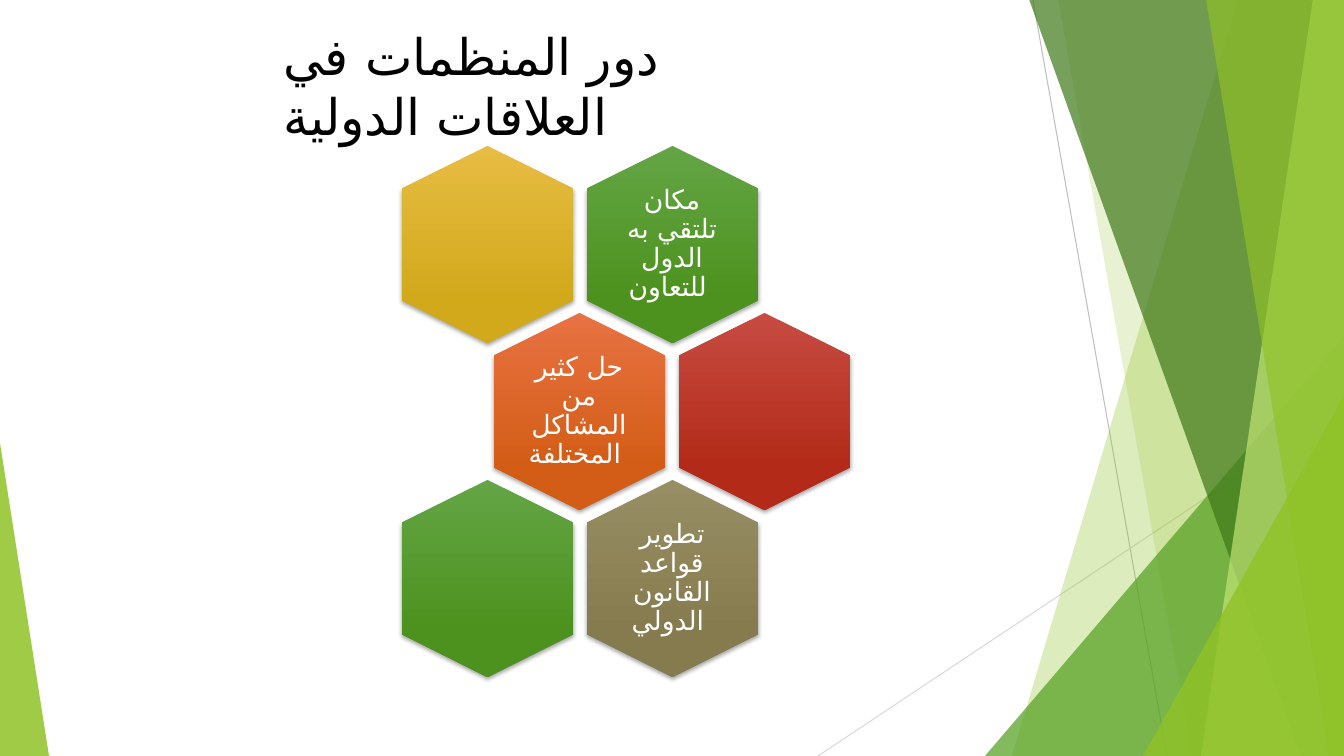
from dataclasses import dataclass
from pptx import Presentation, util as u
from pptx.dml.color import RGBColor
from pptx.enum import shapes, text
from pptx.oxml import parse_xml
from pptx.oxml.ns import nsdecls, qn

PX = 914400 / 100.8
WIDE, HIGH = 1344, 756


def px(n):
    return u.Emu(round(n * PX))


@dataclass
class Theme:
    head: str = "Arial"
    body: str = "Cabin"
    arab: str = "DejaVu Sans"
    big: int = 36
    small: int = 19
    black: str = "000000"
    white: str = "FFFFFF"
    lime: str = "90C226"
    green: str = "54A021"
    dark: str = "3F7819"
    pale: str = "C0E474"
    gray: str = "BFBFBF"
    light: str = "D9D9D9"
    # Hexagon gradients: top colour, bottom colour
    leaf: tuple = ("63A545", "4D921E")
    gold: tuple = ("E7BC43", "D2A91B")
    flame: tuple = ("E87242", "D35D16")
    brick: tuple = ("C74B42", "B32B18")
    olive: tuple = ("988E64", "857B4E")


class Deck:
    def __init__(self, theme):
        self.theme = theme
        self.file = Presentation()
        self.file.slide_width, self.file.slide_height = px(WIDE), px(HIGH)
        self.slide = self.file.slides.add_slide(self.file.slide_layouts[5])
        self.items = self.slide.shapes

    def style(self, frame, words, font, size, color, align):
        frame.text = words
        frame.word_wrap = True
        frame.auto_size = text.MSO_AUTO_SIZE.NONE
        para = frame.paragraphs[0]
        para.alignment = align
        run = para.runs[0]
        run.font.name, run.font.size = font, u.Pt(size)
        run.font.color.rgb = RGBColor.from_string(color)
        # Arabic letters take the complex-script font
        run.font._element.append(parse_xml(
            f'<a:cs {nsdecls("a")} typeface="{self.theme.arab}"/>'))
        return para

    def title(self, words, x, y, w, h):
        box = self.items.title
        box.left, box.top, box.width, box.height = map(px, (x, y, w, h))
        box.text_frame.vertical_anchor = text.MSO_ANCHOR.TOP
        t = self.theme
        self.style(box.text_frame, words, t.head, t.big, t.black,
                   text.PP_ALIGN.LEFT)

    def line(self, x1, y1, x2, y2, color):
        line = self.items.add_connector(
            shapes.MSO_CONNECTOR.STRAIGHT, *map(px, (x1, y1, x2, y2)))
        line.line.color.rgb = RGBColor.from_string(color)
        line.line.width = u.Pt(0.75)
        line._element.spPr.append(parse_xml(f'<a:effectLst {nsdecls("a")}/>'))

    def tint(self, shape, color, alpha):
        shape.shadow.inherit = False
        shape.line.fill.background()
        shape.fill.solid()
        shape.fill.fore_color.rgb = RGBColor.from_string(color)
        shade = shape._element.spPr.find(qn("a:solidFill"))[0]
        shade.append(parse_xml(
            f'<a:alpha {nsdecls("a")} val="{alpha * 1000}"/>'))

    def band(self, top, base, color, alpha):
        """Panel from a slanted left side to the right slide edge."""
        path = self.items.build_freeform(top, -1, scale=PX)
        path.add_line_segments([(WIDE, -1), (WIDE, HIGH), (base, HIGH)])
        self.tint(path.convert_to_shape(), color, alpha)

    def wedge(self, x, y, w, peak, color, alpha):
        """Triangle standing on the bottom edge."""
        shape = self.items.add_shape(
            shapes.MSO_SHAPE.ISOSCELES_TRIANGLE,
            *map(px, (x, y, w, HIGH - y)))
        shape.adjustments[0] = peak
        self.tint(shape, color, alpha)

    def hexa(self, x, y, w, h, colors, words):
        # The preset lies flat, so it is turned about its centre
        shape = self.items.add_shape(
            shapes.MSO_SHAPE.HEXAGON,
            *map(px, (x + (w - h) / 2, y + (h - w) / 2, h, w)))
        shape.rotation = 90
        shape.adjustments[0] = 0.25
        shape.line.fill.background()
        shape.fill.gradient()
        shape.fill.gradient_angle = 270
        for stop, color, spot in zip(shape.fill.gradient_stops, colors,
                                     (0, 0.78)):
            stop.color.rgb = RGBColor.from_string(color)
            stop.position = spot
        props = shape._element.spPr
        props.find(qn("a:gradFill")).set("rotWithShape", "0")
        props.append(parse_xml(
            f'<a:effectLst {nsdecls("a")}><a:outerShdw blurRad="38100" '
            'dist="25400" dir="5400000" rotWithShape="0">'
            f'<a:srgbClr val="{self.theme.black}"><a:alpha val="35000"/>'
            '</a:srgbClr></a:outerShdw></a:effectLst>'))
        if words:
            self.label(x + 26, y + 31, w - 53, h - 62, words)

    def label(self, x, y, w, h, words):
        frame = self.items.add_textbox(*map(px, (x, y, w, h))).text_frame
        frame.margin_left = frame.margin_right = px(8)
        frame.margin_top = frame.margin_bottom = px(8)
        frame.vertical_anchor = text.MSO_ANCHOR.MIDDLE
        t = self.theme
        para = self.style(frame, words, t.body, t.small, t.white,
                          text.PP_ALIGN.CENTER)
        para.line_spacing = 0.9


def main():
    t = Theme()
    deck = Deck(t)

    # Side decoration
    deck.line(1033, 0, 1167, HIGH, t.gray)
    deck.line(WIDE, 406, 818, HIGH, t.light)
    deck.band(1238, 1012, t.lime, 30)
    deck.band(1058, 1192, t.lime, 20)
    deck.wedge(985, 336, 359, 1, t.green, 72)
    deck.band(1029, 1301, t.dark, 70)
    deck.band(1313, 1201, t.pale, 70)
    deck.band(1206, 1329, t.lime, 65)
    deck.wedge(1143, 396, 201, 1, t.lime, 80)
    deck.wedge(0, 443, 49, 0, t.lime, 85)

    # Title
    deck.title("دور المنظمات في العلاقات الدولية", 273, 20, 567, 90)

    # Honeycomb: the middle row moves right by half a step
    rows = [
        [(t.gold, ""), (t.leaf, "مكان تلتقي به الدول للتعاون ")],
        [(t.flame, "حل كثير من المشاكل المختلفة "), (t.brick, "")],
        [(t.leaf, ""), (t.olive, "تطوير قواعد القانون الدولي ")],
    ]
    for r, row in enumerate(rows):
        for c, (colors, words) in enumerate(row):
            deck.hexa(402 + 185 * c + 92 * (r % 2), 146 + 167 * r,
                      171, 197, colors, words)

    deck.file.save("out.pptx")


if __name__ == "__main__":
    main()
